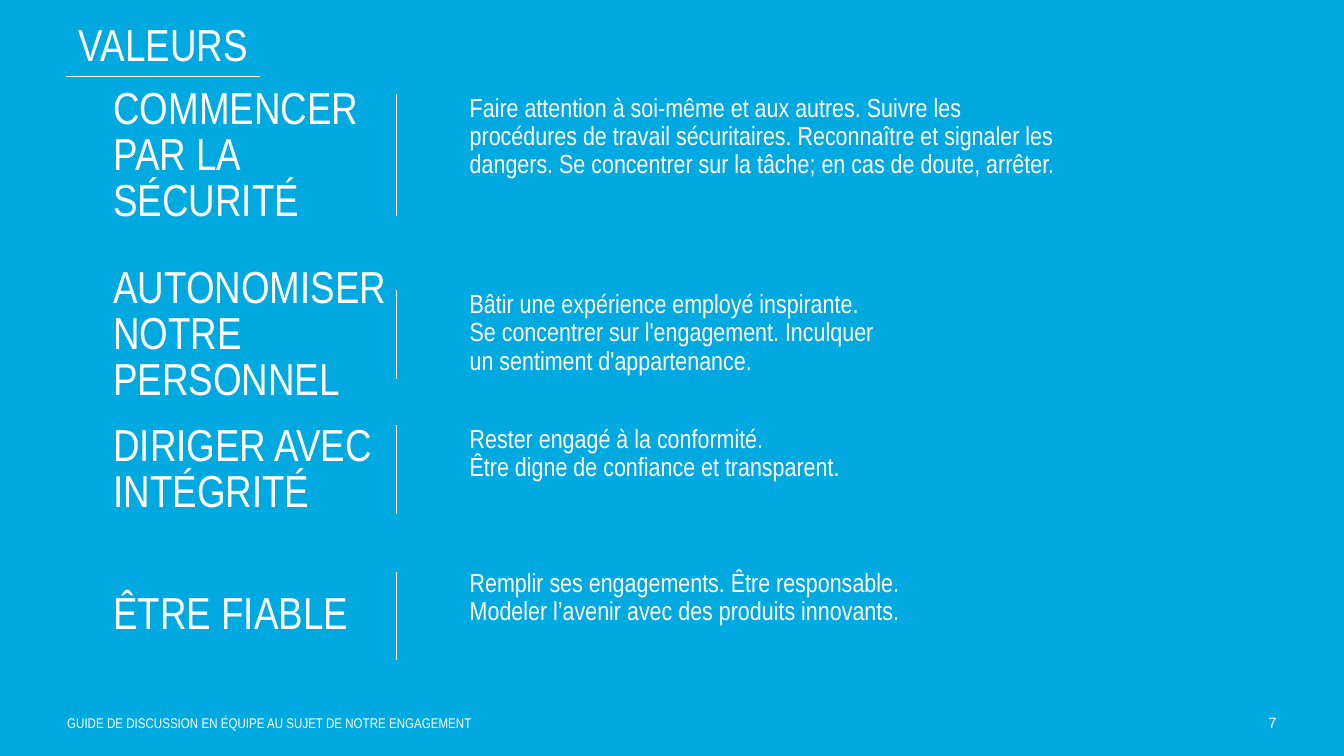
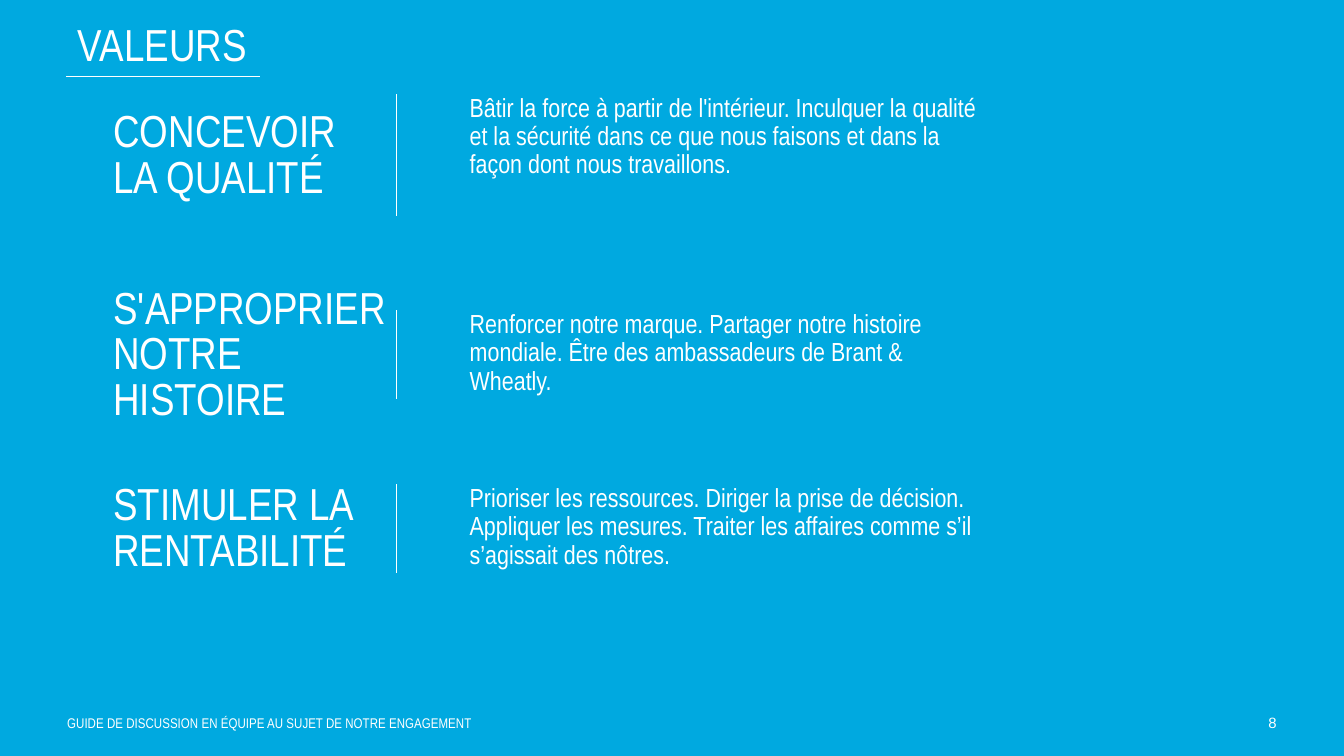
import copy
from dataclasses import dataclass

import pptx
import pptx.dml.color
import pptx.enum.shapes
import pptx.enum.text
import pptx.oxml.ns
import pptx.util
from lxml import etree

PX = 4572  # 200 px to the inch
WIDTH, HEIGHT = 2000, 1125
BLUE = pptx.dml.color.RGBColor(0x00, 0xA9, 0xE0)
WHITE = pptx.dml.color.RGBColor(0xFF, 0xFF, 0xFF)
FONT = "Arial Narrow"
ALIGN = pptx.enum.text.PP_ALIGN
ANCHOR = pptx.enum.text.MSO_ANCHOR

MARGIN = 100
ROW_X = 169
HEADING_W = 420
RULE_DX, BODY_DX = 421, 530
FOOTER = "GUIDE DE DISCUSSION EN ÉQUIPE AU SUJET DE NOTRE ENGAGEMENT"


@dataclass
class Value:
    heading: str
    body: str
    y: int
    body_w: int
    body_h: int = 134
    heading_h: int = 134
    rule_h: int = 129
    rule_dy: int = 0
    spacing: float = 0.85


@dataclass
class Page:
    number: int
    title_x: int
    values: list


PAGES = [
    Page(7, 100, [
        Value("COMMENCER PAR LA SÉCURITÉ",
              "Faire attention à soi-même et aux autres. Suivre les procédures de "
              "travail sécuritaires. Reconnaître et signaler les dangers. Se "
              "concentrer sur la tâche; en cas de doute, arrêter.",
              141, 884, body_h=224, heading_h=184, rule_h=179),
        Value("AUTONOMISER NOTRE PERSONNEL",
              "Bâtir une expérience employé inspirante.\n"
              "Se concentrer sur l'engagement. Inculquer\n"
              "un sentiment d'appartenance.",
              433, 860, body_h=158),
        Value("DIRIGER AVEC INTÉGRITÉ",
              "Rester engagé à la conformité.\n"
              "Être digne de confiance et transparent.",
              634, 918),
        Value("ÊTRE FIABLE",
              "Remplir ses engagements. Être responsable.\n"
              "Modeler l’avenir avec des produits innovants.",
              848, 1090, rule_dy=4, spacing=0.9),
    ]),
    Page(8, 97, [
        Value("CONCEVOIR\nLA QUALITÉ",
              "Bâtir la force à partir de l'intérieur. Inculquer la qualité et la "
              "sécurité dans ce que nous faisons et dans la façon dont nous "
              "travaillons.",
              141, 786, body_h=224, heading_h=184, rule_h=179),
        Value("S'APPROPRIER NOTRE HISTOIRE",
              "Renforcer notre marque. Partager notre histoire mondiale. Être des "
              "ambassadeurs de Brant & Wheatly.",
              463, 762, body_h=158),
        Value("STIMULER LA RENTABILITÉ",
              "Prioriser les ressources. Diriger la prise de décision. Appliquer "
              "les mesures. Traiter les affaires comme s’il s’agissait des nôtres.",
              722, 786),
    ]),
]


def px(*lengths):
    return [pptx.util.Emu(n * PX) for n in lengths]


def add_text(s, box, text, *, size, font=FONT, align=ALIGN.LEFT,
             anchor=ANCHOR.TOP, spacing=None, inset_top=0):
    """Add a one-paragraph text box; a newline becomes a line break."""
    tf = s.shapes.add_textbox(*px(*box)).text_frame
    tf.word_wrap = True
    tf.vertical_anchor = anchor
    tf.margin_left = tf.margin_right = tf.margin_bottom = 0
    tf.margin_top = px(inset_top)[0]
    p = tf.paragraphs[0]
    p.text = text
    p.alignment = align
    p.line_spacing = spacing
    for r in p.runs:
        r.font.name = font
        r.font.size = pptx.util.Pt(size)
        r.font.color.rgb = WHITE
    # Line breaks take the run format, so they do not stretch their line.
    for br in p._p.findall(pptx.oxml.ns.qn("a:br")):
        br.append(copy.deepcopy(p.runs[0].font._element))


def add_rule(s, x1, y1, x2, y2):
    """Draw a white line with square ends."""
    rule = s.shapes.add_connector(
        pptx.enum.shapes.MSO_CONNECTOR.STRAIGHT, *px(x1, y1, x2, y2))
    rule.line.color.rgb = WHITE
    rule.line.width = pptx.util.Pt(1)
    sp_pr = rule._element.spPr
    sp_pr.find(pptx.oxml.ns.qn("a:ln")).set("cap", "sq")
    etree.SubElement(sp_pr, pptx.oxml.ns.qn("a:effectLst"))


def add_title(s, x, y, w, h, text, text_x):
    """Place the title from text_x to the right end of its underline."""
    add_text(s, (text_x, y, x + w - text_x, h), text, size=24,
             align=ALIGN.CENTER, anchor=ANCHOR.MIDDLE, spacing=0.9)
    add_rule(s, x, y + 114, x + w, y + 114)


def add_value(s, x, y, value):
    """Place heading, vertical rule and description from the row's top left."""
    add_text(s, (x + BODY_DX, y, value.body_w, value.body_h), value.body,
             size=14, spacing=0.9)
    add_text(s, (x, y, HEADING_W, value.heading_h), value.heading, size=24,
             anchor=ANCHOR.MIDDLE, spacing=value.spacing)
    rule_x, rule_y = x + RULE_DX, y + value.rule_dy
    add_rule(s, rule_x, rule_y, rule_x, rule_y + value.rule_h)


def add_footer(s, x, y, w, h, number):
    add_text(s, (x, y, 870, h), FOOTER, size=7.5, inset_top=4)
    add_text(s, (x + w - 100, y, 100, h), str(number), size=8, font="Arial",
             align=ALIGN.RIGHT, inset_top=2)


def add_values_slide(prs, page):
    s = prs.slides.add_slide(prs.slide_layouts[6])
    s.background.fill.solid()
    s.background.fill.fore_color.rgb = BLUE
    add_footer(s, MARGIN, 1060, WIDTH - 2 * MARGIN, 40, page.number)
    for value in page.values:
        add_value(s, ROW_X, value.y, value)
    add_title(s, MARGIN, 0, 286, 141, "VALEURS", page.title_x)


def main():
    prs = pptx.Presentation()
    prs.slide_width, prs.slide_height = px(WIDTH, HEIGHT)
    for page in PAGES:
        add_values_slide(prs, page)
    prs.save("out.pptx")


if __name__ == "__main__":
    main()
